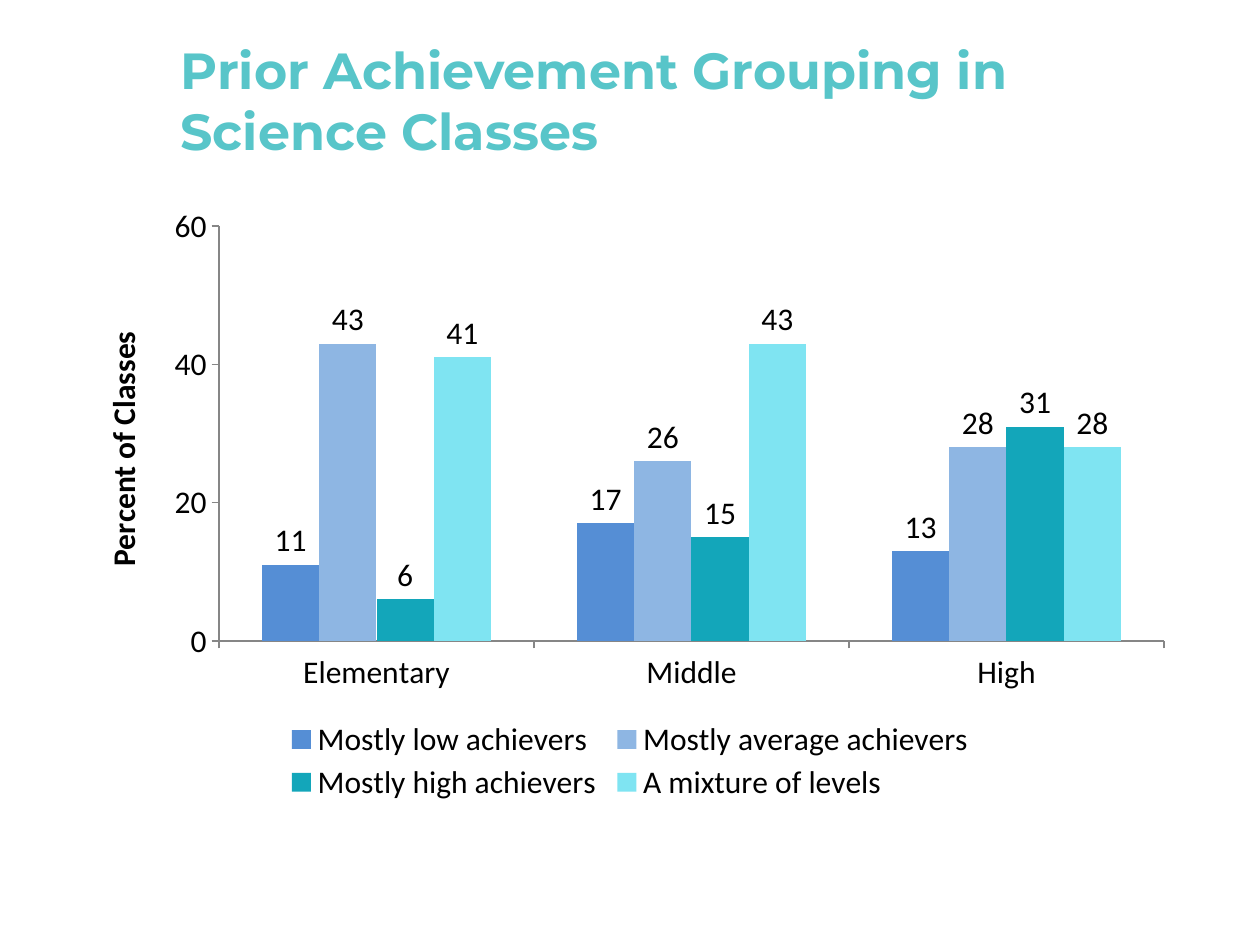
from dataclasses import dataclass

from lxml.etree import SubElement
from pptx import Presentation
from pptx.chart.data import CategoryChartData
from pptx.dml.color import RGBColor
from pptx.enum.chart import XL_CHART_TYPE as ChartType
from pptx.enum.chart import XL_LABEL_POSITION as LabelPos
from pptx.enum.chart import XL_LEGEND_POSITION as LegendPos
from pptx.enum.chart import XL_TICK_MARK as Tick
from pptx.enum.text import MSO_ANCHOR, MSO_AUTO_SIZE, PP_ALIGN
from pptx.oxml.ns import qn
from pptx.util import Pt

PX = 914400 // 126  # EMU per pixel
TEAL = RGBColor(0x58, 0xC5, 0xC9)
BLACK = RGBColor(0, 0, 0)
GRAY = RGBColor(0x86, 0x86, 0x86)


@dataclass(frozen=True)
class Box:
    x: int
    y: int
    w: int
    h: int

    def emu(self) -> tuple[int, ...]:
        return tuple(v * PX for v in (self.x, self.y, self.w, self.h))


@dataclass(frozen=True)
class Series:
    name: str
    values: tuple[int, ...]
    color: RGBColor


SLIDE = Box(0, 0, 1260, 945)
TITLE = Box(168, 21, 1050, 158)
CHART = Box(73, 195, 1113, 614)
PLOT = Box(219, 226, 945, 415)
LEGEND = Box(281, 716, 698, 90)

LEVELS = ("Elementary", "Middle", "High")
SERIES = (
    Series("Mostly low achievers", (11, 17, 13), RGBColor(0x55, 0x8E, 0xD5)),
    Series("Mostly average achievers", (43, 26, 28), RGBColor(0x8E, 0xB6, 0xE3)),
    Series("Mostly high achievers", (6, 15, 31), RGBColor(0x13, 0xA6, 0xBA)),
    Series("A mixture of levels", (41, 43, 28), RGBColor(0x7F, 0xE4, 0xF2)),
)


def set_layout(layout, box: Box, inner: bool = False) -> None:
    """Place a chart part by hand, as fractions of the chart."""
    for child in list(layout):
        layout.remove(child)
    manual = SubElement(layout, qn("c:manualLayout"))
    settings = [("layoutTarget", "inner")] if inner else []
    settings += [
        ("xMode", "edge"),
        ("yMode", "edge"),
        ("x", round((box.x - CHART.x) / CHART.w, 4)),
        ("y", round((box.y - CHART.y) / CHART.h, 4)),
        ("w", round(box.w / CHART.w, 4)),
        ("h", round(box.h / CHART.h, 4)),
    ]
    for tag, value in settings:
        SubElement(manual, qn(f"c:{tag}")).set("val", str(value))


def style_axis(axis) -> None:
    axis.has_major_gridlines = False
    axis.major_tick_mark = Tick.OUTSIDE
    axis.minor_tick_mark = Tick.NONE
    axis.format.line.color.rgb = GRAY
    axis.format.line.width = Pt(0.75)


def add_title(slide, text: str) -> None:
    sp = slide.shapes.title
    sp.left, sp.top, sp.width, sp.height = TITLE.emu()
    tf = sp.text_frame
    tf.text = text
    tf.word_wrap = True
    tf.auto_size = MSO_AUTO_SIZE.NONE
    tf.vertical_anchor = MSO_ANCHOR.MIDDLE
    p = tf.paragraphs[0]
    p.alignment = PP_ALIGN.LEFT
    p.font.name, p.font.size, p.font.bold = "Montserrat", Pt(29), True
    p.font.color.rgb = TEAL


def add_achievement_chart(slide) -> None:
    data = CategoryChartData()
    data.categories = LEVELS
    for s in SERIES:
        data.add_series(s.name, s.values)
    chart = slide.shapes.add_chart(ChartType.COLUMN_CLUSTERED, *CHART.emu(), data).chart
    chart.has_title = False
    chart.font.name, chart.font.size = "Calibri", Pt(18)
    chart.font.color.rgb = BLACK

    # Columns and their values
    plot = chart.plots[0]
    plot.gap_width, plot.overlap = 150, 0
    plot.vary_by_categories = False
    for bars, s in zip(plot.series, SERIES):
        bars.format.fill.solid()
        bars.format.fill.fore_color.rgb = s.color
        bars.data_labels.show_value = True
        bars.data_labels.position = LabelPos.OUTSIDE_END

    # Axes
    style_axis(chart.category_axis)
    axis = chart.value_axis
    style_axis(axis)
    axis.minimum_scale, axis.maximum_scale, axis.major_unit = 0, 60, 20
    tf = axis.axis_title.text_frame
    tf.text = "Percent of Classes"
    font = tf.paragraphs[0].font
    font.name, font.size, font.bold = "Calibri", Pt(18), True
    font.color.rgb = BLACK

    # Legend and fixed layout
    chart.has_legend = True
    legend = chart.legend
    legend.position = LegendPos.BOTTOM
    legend.include_in_layout = False
    area = plot.series[0].format.fill and chart.element.find(".//" + qn("c:plotArea"))
    layout = area.find(qn("c:layout"))
    if layout is None:
        layout = SubElement(area, qn("c:layout"))
        area.insert(0, layout)
    set_layout(layout, PLOT, inner=True)
    key = chart.element.find(".//" + qn("c:legend"))
    layout = key.find(qn("c:layout"))
    if layout is None:
        layout = SubElement(key, qn("c:layout"))
        key.find(qn("c:legendPos")).addnext(layout)
    set_layout(layout, LEGEND)


def main() -> None:
    prs = Presentation()
    prs.slide_width, prs.slide_height = SLIDE.w * PX, SLIDE.h * PX
    slide = prs.slides.add_slide(prs.slide_layouts[5])
    add_achievement_chart(slide)
    add_title(slide, "Prior Achievement Grouping in Science Classes")
    prs.save("out.pptx")


if __name__ == "__main__":
    main()
